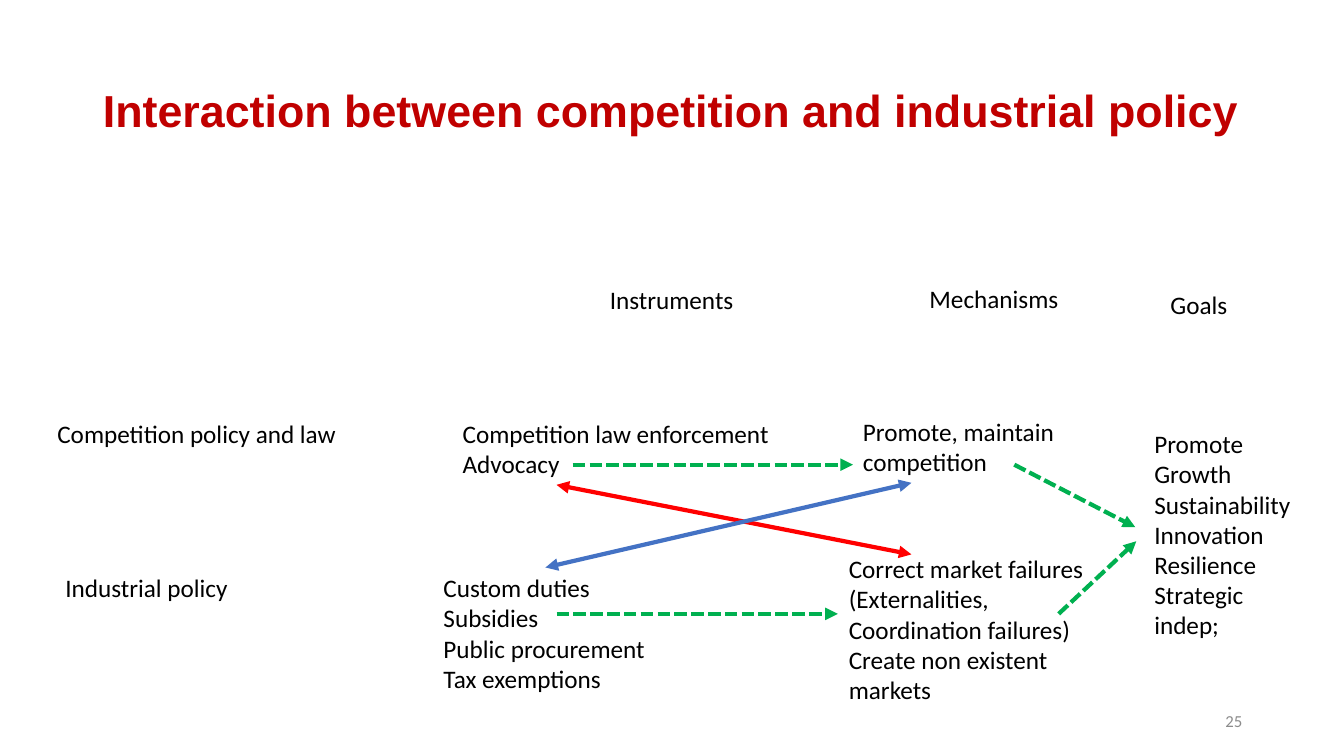
from dataclasses import dataclass

from lxml.etree import SubElement
from pptx import Presentation
from pptx.dml.color import RGBColor
from pptx.enum.dml import MSO_LINE_DASH_STYLE as Dash
from pptx.enum.shapes import MSO_CONNECTOR as Connector
from pptx.enum.text import MSO_ANCHOR as Anchor, MSO_AUTO_SIZE as AutoSize, PP_ALIGN as Align
from pptx.oxml.ns import qn
from pptx.util import Inches, Pt


@dataclass(frozen=True)
class Theme:
    title_font: str = "Arial"
    body_font: str = "Calibri"
    title_size: int = 32
    body_size: int = 18
    number_size: int = 12
    arrow_width: int = 3
    title: str = "C00000"
    text: str = "000000"
    number: str = "8C8C8C"
    tension: str = "FF0000"
    feedback: str = "4472C4"
    flow: str = "00B050"


THEME = Theme()
TITLE = "Interaction between competition and industrial policy"
TITLE_BOX = (0.92, 0.4, 11.5, 1.45)
PAGE_NUMBER = "25"
NUMBER_BOX = (9.42, 6.95, 3, 0.4)

LABELS = [
    ((5.95, 2.77, 1.44, 0.4), False, ["Instruments"]),
    ((9.12, 2.76, 1.55, 0.4), False, ["Mechanisms"]),
    ((11.51, 2.82, 0.77, 0.4), False, ["Goals"]),
    ((0.47, 4.1, 4.81, 0.4), True, ["Competition policy and law"]),
    ((4.49, 4.1, 3.28, 0.71), False, ["Competition law enforcement", "Advocacy"]),
    ((8.46, 4.08, 2.12, 0.71), True, ["Promote, maintain competition"]),
    ((0.55, 5.63, 3.05, 0.4), True, ["Industrial policy"]),
    ((4.3, 5.63, 2.22, 1.62), False,
     ["Custom duties", "Subsidies", "Public procurement", "Tax exemptions"]),
    ((8.32, 5.44, 2.55, 1.92), False,
     ["Correct market failures", "(Externalities,", "Coordination failures)",
      "Create non existent", "markets"]),
    ((11.35, 4.2, 1.69, 2.22), True,
     ["Promote Growth", "Sustainability", "Innovation", "Resilience", "Strategic indep;"]),
]

CROSS_ARROWS = [
    ((5.52, 4.81), (9.04, 5.5), THEME.tension),
    ((5.41, 5.63), (9.04, 4.79), THEME.feedback),
]
FLOW_ARROWS = [
    ((5.68, 4.61), (8.46, 4.61)),
    ((10.06, 4.61), (11.26, 5.23)),
    ((5.52, 6.09), (8.31, 6.09)),
    ((10.5, 6.09), (11.27, 5.37)),
]


def add_text(paragraph, text, font, size, color, bold=False):
    run = paragraph.add_run()
    run.text = text
    run.font.name = font
    run.font.size = Pt(size)
    run.font.bold = bold
    run.font.color.rgb = RGBColor.from_string(color)


def add_title(slide):
    title = slide.shapes.title
    title.left, title.top, title.width, title.height = map(Inches, TITLE_BOX)
    frame = title.text_frame
    frame.auto_size = AutoSize.NONE
    frame.vertical_anchor = Anchor.MIDDLE
    paragraph = frame.paragraphs[0]
    paragraph.alignment = Align.LEFT
    paragraph.line_spacing = 0.9
    add_text(paragraph, TITLE, THEME.title_font, THEME.title_size, THEME.title, True)


def add_label(slide, box, wrap, lines):
    frame = slide.shapes.add_textbox(*map(Inches, box)).text_frame
    frame.word_wrap = wrap
    frame.auto_size = AutoSize.SHAPE_TO_FIT_TEXT
    for index, line in enumerate(lines):
        paragraph = frame.add_paragraph() if index else frame.paragraphs[0]
        add_text(paragraph, line, THEME.body_font, THEME.body_size, THEME.text)


def add_number(slide):
    frame = slide.shapes.add_textbox(*map(Inches, NUMBER_BOX)).text_frame
    frame.word_wrap = True
    frame.vertical_anchor = Anchor.MIDDLE
    paragraph = frame.paragraphs[0]
    paragraph.alignment = Align.RIGHT
    add_text(paragraph, PAGE_NUMBER, THEME.body_font, THEME.number_size, THEME.number)


def add_arrow(slide, start, end, color, ends, dash=None):
    arrow = slide.shapes.add_connector(Connector.STRAIGHT, *map(Inches, start + end))
    arrow.line.color.rgb = RGBColor.from_string(color)
    arrow.line.width = Pt(THEME.arrow_width)
    if dash:
        arrow.line.dash_style = dash
    properties = arrow.element.spPr
    outline = properties.find(qn("a:ln"))
    for tag in ends:
        SubElement(outline, qn(tag), type="triangle")
    SubElement(properties, qn("a:effectLst"))


def main():
    """Build the slide on competition and industrial policy."""
    presentation = Presentation()
    presentation.slide_width = Inches(13.33)
    presentation.slide_height = Inches(7.5)
    slide = presentation.slides.add_slide(presentation.slide_layouts[5])
    add_title(slide)
    for box, wrap, lines in LABELS:
        add_label(slide, box, wrap, lines)
    for start, end, color in CROSS_ARROWS:
        add_arrow(slide, start, end, color, ("a:headEnd", "a:tailEnd"))
    for start, end in FLOW_ARROWS:
        add_arrow(slide, start, end, THEME.flow, ("a:tailEnd",), Dash.SQUARE_DOT)
    add_number(slide)
    presentation.save("out.pptx")


if __name__ == "__main__":
    main()
